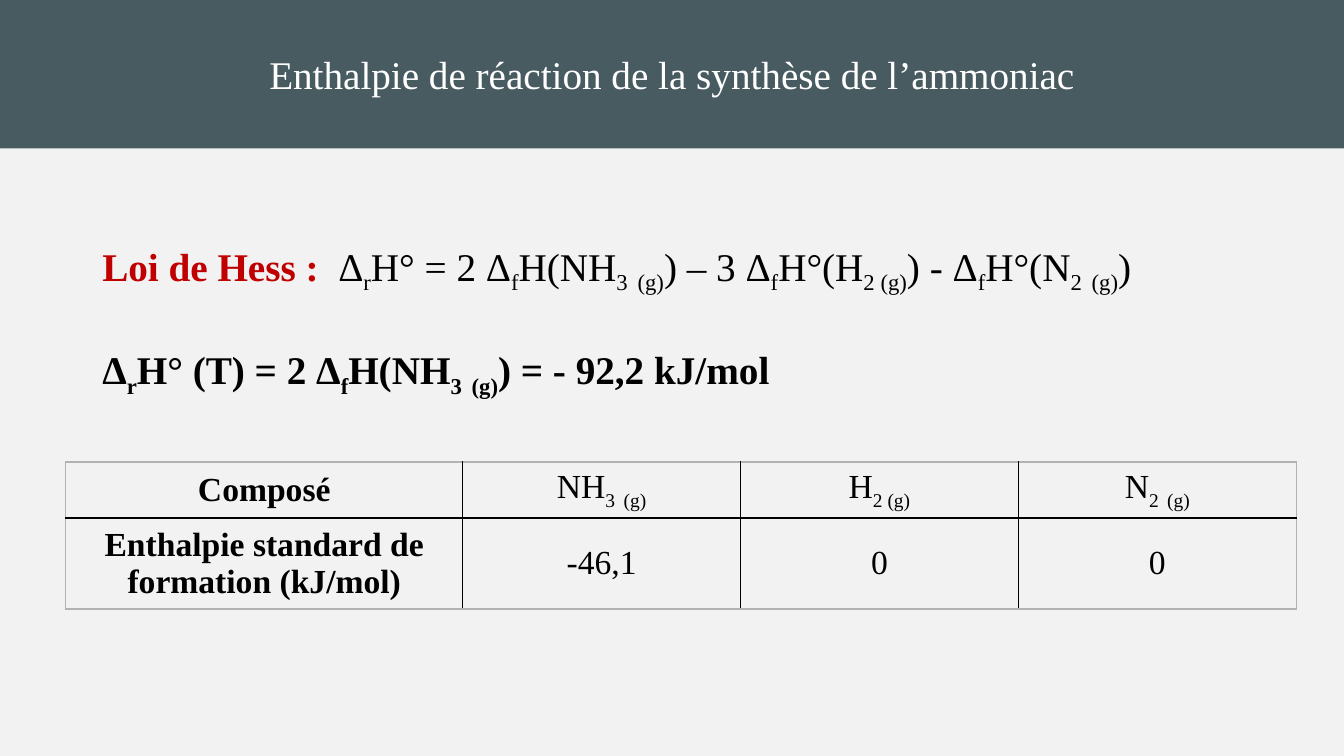
from lxml import etree
from pptx import Presentation
from pptx.dml.color import RGBColor
from pptx.enum.text import MSO_ANCHOR as Anchor, PP_ALIGN as Align
from pptx.oxml.ns import qn
from pptx.util import Pt

COLORS = {"background": "F2F2F2", "banner": "475B61", "title": "FFFFFF",
          "law": "C00000", "text": "000000", "frame": "B2B2B2"}
FONT = "Times New Roman"


def write(paragraph, marked, size, color, bold=False):
    paragraph.font.name = FONT
    paragraph.font.size = Pt(size)
    paragraph.font.bold = bold
    paragraph.font.color.rgb = RGBColor.from_string(COLORS[color])
    for index, part in enumerate(marked.split("|")):
        if part:
            run = paragraph.add_run()
            run.text = part
            if index % 2:
                run.font._element.set("baseline", "-25000")


def add_border(cell, side, color, width):
    line = etree.SubElement(cell._tc.get_or_add_tcPr(), qn("a:" + side), w=str(Pt(width)))
    fill = etree.SubElement(line, qn("a:solidFill"))
    etree.SubElement(fill, qn("a:srgbClr"), val=COLORS[color])


prs = Presentation()
prs.slide_width, prs.slide_height = Pt(960), Pt(540)
slide = prs.slides.add_slide(prs.slide_layouts[5])
slide.background.fill.solid()
slide.background.fill.fore_color.rgb = RGBColor.from_string(COLORS["background"])

title = slide.shapes.title
title.left, title.top, title.width, title.height = Pt(0), Pt(0), Pt(960), Pt(106)
title.fill.solid()
title.fill.fore_color.rgb = RGBColor.from_string(COLORS["banner"])
title.text_frame.vertical_anchor = Anchor.MIDDLE
heading = title.text_frame.paragraphs[0]
heading.alignment = Align.CENTER
write(heading, "Enthalpie de réaction de la synthèse de l’ammoniac", 28, "title")

hess = slide.shapes.add_textbox(Pt(66), Pt(169.2), Pt(802), Pt(108.7)).text_frame
hess.word_wrap = True
law = hess.paragraphs[0]
write(law, "Loi de Hess :  |", 28, "text")
law.runs[0].font.bold = True
law.runs[0].font.color.rgb = RGBColor.from_string(COLORS["law"])
write(law, "Δ|r|H° = 2 Δ|f|H(NH|3| |(g)|) – 3 Δ|f|H°(H|2 (g)|) - Δ|f|H°(N|2| |(g)|)", 28, "text")
result = hess.add_paragraph()
result.space_before = Pt(36)
write(result, "Δ|r|H° (T) = 2 Δ|f|H(NH|3| |(g)|) = - 92,2 kJ/mol", 28, "text", True)

rows = [
    ["Composé", "NH|3| |(g)|", "H|2 (g)|", "N|2| |(g)|"],
    ["Enthalpie standard de formation (kJ/mol)", "-46,1", "0", "0"],
]
column_widths = [283.5, 198.5, 198.5, 198.5]
row_heights = [40, 65]
enthalpies = slide.shapes.add_table(2, 4, Pt(47), Pt(330), Pt(879), Pt(105)).table
enthalpies.first_row = enthalpies.horz_banding = False
for column, width in zip(enthalpies.columns, column_widths):
    column.width = Pt(width)
for row, height in zip(enthalpies.rows, row_heights):
    row.height = Pt(height)

for r, row in enumerate(rows):
    for c, marked in enumerate(row):
        cell = enthalpies.cell(r, c)
        cell.vertical_anchor = Anchor.MIDDLE
        outer = {"lnL": c == 0, "lnR": c == 3, "lnT": r == 0, "lnB": r == 1}
        for side, on_frame in outer.items():
            add_border(cell, side, "frame" if on_frame else "text", 1)
        cell.fill.background()
        entry = cell.text_frame.paragraphs[0]
        entry.alignment = Align.CENTER
        write(entry, marked, 24, "text", c == 0)

prs.save("out.pptx")
